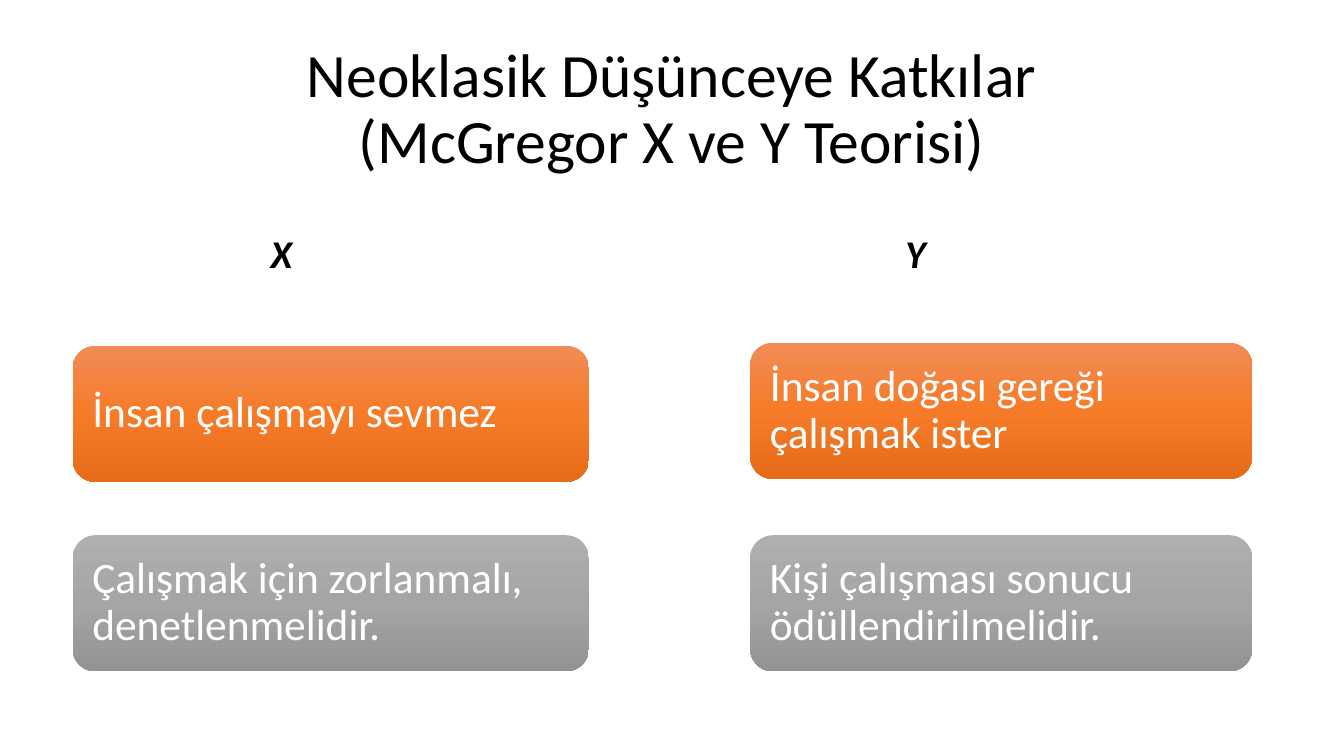
import copy

import pptx
import pptx.util
import pptx.dml.color
import pptx.enum.shapes
import pptx.enum.text

Inches = pptx.util.Inches
RGBColor = pptx.dml.color.RGBColor
ALIGN = pptx.enum.text.PP_ALIGN
ANCHOR = pptx.enum.text.MSO_ANCHOR

BLACK = RGBColor(0x00, 0x00, 0x00)
WHITE = RGBColor(0xFF, 0xFF, 0xFF)
ORANGES = [RGBColor(0xF1, 0x8C, 0x57), RGBColor(0xF6, 0x7B, 0x28), RGBColor(0xE5, 0x6C, 0x19)]
GRAYS = [RGBColor(0xAF, 0xAF, 0xAF), RGBColor(0xA5, 0xA5, 0xA5), RGBColor(0x93, 0x93, 0x93)]

TITLE = "Neoklasik Düşünceye Katkılar\v(McGregor X ve Y Teorisi)"
THEORIES = [
    {"heading": "X", "heading_center": 2.79, "left": 0.72, "width": 5.12,
     "claims": [(3.43, "İnsan çalışmayı sevmez"),
                (5.31, "Çalışmak için zorlanmalı, denetlenmelidir.")]},
    {"heading": "Y", "heading_center": 9.08, "left": 7.44, "width": 4.98,
     "claims": [(3.40, "İnsan doğası gereği çalışmak ister"),
                (5.31, "Kişi çalışması sonucu ödüllendirilmelidir.")]},
]
CLAIM_HEIGHT = 1.35
HEADING_WIDTH, HEADING_HEIGHT = 1, 0.55


def write(shape, text, size, color=BLACK, bold=False, italic=False,
          align=ALIGN.CENTER, anchor=ANCHOR.MIDDLE, inset=None):
    frame = shape.text_frame
    frame.word_wrap = True
    frame.vertical_anchor = anchor
    if inset is not None:
        frame.margin_left = frame.margin_right = Inches(inset)
        frame.margin_top = frame.margin_bottom = Inches(inset)
    paragraph = frame.paragraphs[0]
    paragraph.text = text
    paragraph.alignment = align
    paragraph.line_spacing = 0.9
    for run in paragraph.runs:
        run.font.name = "Calibri"
        run.font.size = pptx.util.Pt(size)
        run.font.color.rgb = color
        run.font.bold = bold
        run.font.italic = italic


def fill_downward(shape, colors):
    """Fill with three evenly spaced colours from top to bottom."""
    shape.fill.gradient()
    shape.fill.gradient_angle = 270
    last_stop = shape._element.spPr.xpath("./a:gradFill/a:gsLst/a:gs")[-1]
    last_stop.addnext(copy.deepcopy(last_stop))
    for index, (stop, color) in enumerate(zip(shape.fill.gradient_stops, colors)):
        stop.position = index / (len(colors) - 1)
        stop.color.rgb = color


def main():
    deck = pptx.Presentation()
    deck.slide_width, deck.slide_height = Inches(13.33), Inches(7.5)
    slide = deck.slides.add_slide(deck.slide_layouts[6])

    title = slide.shapes.add_textbox(Inches(2.73), Inches(0.37), Inches(7.87), Inches(1.45))
    write(title, TITLE, 44)

    for theory in THEORIES:
        heading = slide.shapes.add_textbox(
            Inches(theory["heading_center"] - HEADING_WIDTH / 2), Inches(2.28),
            Inches(HEADING_WIDTH), Inches(HEADING_HEIGHT))
        write(heading, theory["heading"], 28, bold=True, italic=True, anchor=ANCHOR.TOP)
        for (top, claim), colors in zip(theory["claims"], (ORANGES, GRAYS)):
            box = slide.shapes.add_shape(
                pptx.enum.shapes.MSO_SHAPE.ROUNDED_RECTANGLE,
                Inches(theory["left"]), Inches(top),
                Inches(theory["width"]), Inches(CLAIM_HEIGHT))
            box.shadow.inherit = False
            box.line.fill.background()
            fill_downward(box, colors)
            write(box, claim, 31, color=WHITE, align=ALIGN.LEFT, inset=0.13)

    deck.save("out.pptx")


if __name__ == "__main__":
    main()
